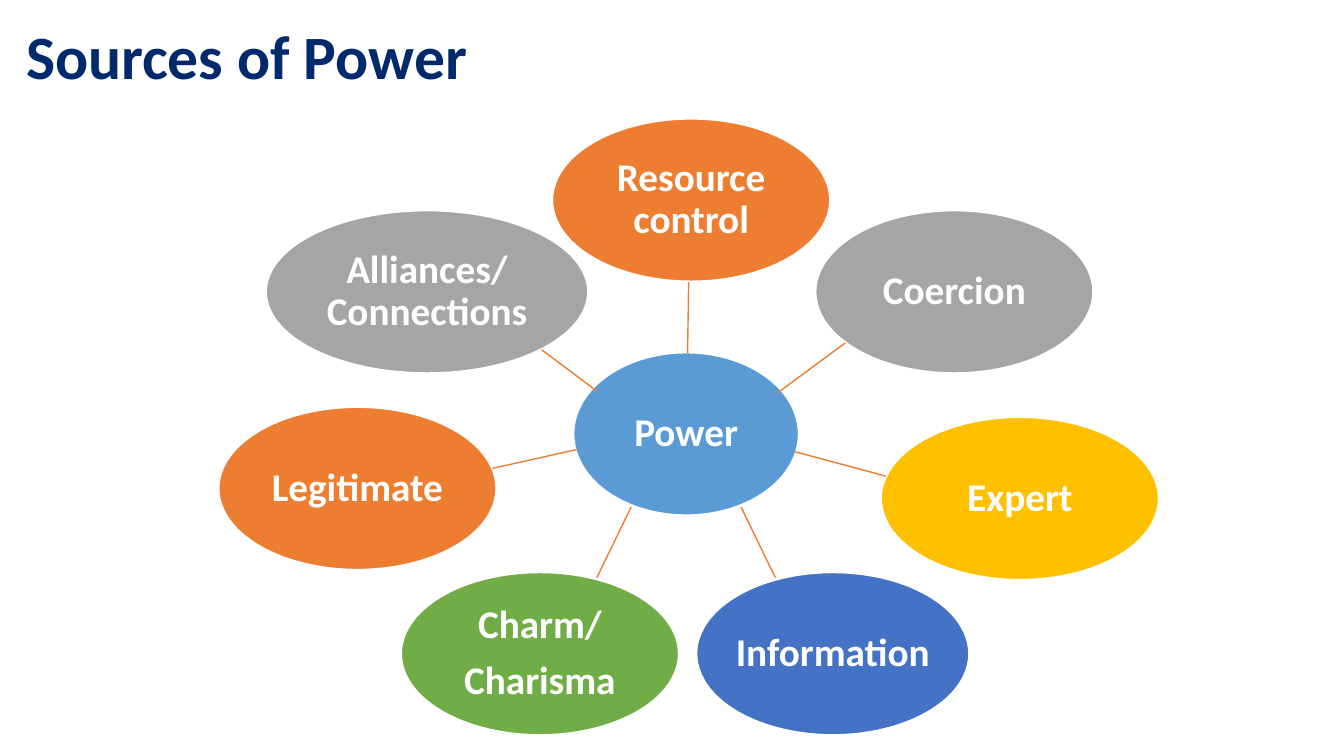
from lxml.etree import SubElement
from pptx import Presentation
from pptx.dml.color import RGBColor
from pptx.enum.shapes import MSO_CONNECTOR, MSO_SHAPE
from pptx.enum.text import MSO_ANCHOR, PP_ALIGN
from pptx.oxml.ns import qn
from pptx.util import Inches, Pt

NAVY = RGBColor(0x00, 0x2A, 0x6C)
WHITE = RGBColor(0xFF, 0xFF, 0xFF)
LIGHT_BLUE = RGBColor(0x5B, 0x9B, 0xD5)
ORANGE = RGBColor(0xED, 0x7D, 0x31)
GRAY = RGBColor(0xA5, 0xA5, 0xA5)
GOLD = RGBColor(0xFF, 0xC0, 0x00)
BLUE = RGBColor(0x44, 0x72, 0xC4)
GREEN = RGBColor(0x70, 0xAD, 0x47)

OVAL_HEIGHT = 1.61
SOURCE_WIDTH = 2.75

# paragraphs, left, top, width, fill, spoke from the hub to the oval
SOURCES = [
    (["Resource control"], 5.48, 1.18, SOURCE_WIDTH, ORANGE, (6.82, 3.5, 6.83, 2.79)),
    (["Coercion"], 8.09, 2.09, SOURCE_WIDTH, GRAY, (7.71, 3.9, 8.44, 3.36)),
    (["Expert"], 8.74, 4.14, SOURCE_WIDTH, GOLD, (7.88, 4.48, 8.81, 4.73)),
    (["Information"], 6.91, 5.68, 2.7, BLUE, (7.35, 5.03, 7.69, 5.73)),
    (["Charm/", "Charisma"], 3.98, 5.68, SOURCE_WIDTH, GREEN, (6.26, 5.03, 5.92, 5.73)),
    (["Legitimate"], 2.17, 4.04, SOURCE_WIDTH, ORANGE, (5.72, 4.46, 4.87, 4.65)),
    (["Alliances/\vConnections"], 2.64, 2.09, 3.19, GRAY, (5.92, 3.88, 5.32, 3.43)),
]


class PowerSlide:
    font_name = "Calibri"
    title_size = Pt(44)
    label_size = Pt(28)
    line_width = Pt(1)
    line_spacing = 0.9
    paragraph_gap = Pt(9.8)

    def __init__(self, presentation):
        self.slide = presentation.slides.add_slide(presentation.slide_layouts[6])

    def style(self, paragraph, size, color):
        paragraph.line_spacing = self.line_spacing
        font = paragraph.font
        font.name = self.font_name
        font.size = size
        font.bold = True
        font.color.rgb = color

    def title(self, text):
        box = self.slide.shapes.add_textbox(
            Inches(0.16), Inches(0), Inches(12.99), Inches(1.18))
        frame = box.text_frame
        frame.word_wrap = True
        frame.vertical_anchor = MSO_ANCHOR.MIDDLE
        frame.text = text
        self.style(frame.paragraphs[0], self.title_size, NAVY)

    def oval(self, lines, left, top, width, fill):
        oval = self.slide.shapes.add_shape(
            MSO_SHAPE.OVAL, Inches(left), Inches(top), Inches(width), Inches(OVAL_HEIGHT))
        oval.shadow.inherit = False
        oval.fill.solid()
        oval.fill.fore_color.rgb = fill
        oval.line.color.rgb = WHITE
        oval.line.width = self.line_width

        frame = oval.text_frame
        frame.margin_left = frame.margin_right = 0
        frame.margin_top = frame.margin_bottom = 0
        # Only labels of several words wrap; single words stay whole.
        frame.word_wrap = any(" " in line for line in lines)
        frame.vertical_anchor = MSO_ANCHOR.MIDDLE
        frame.text = "\n".join(lines)
        for index, paragraph in enumerate(frame.paragraphs):
            paragraph.alignment = PP_ALIGN.CENTER
            if index:
                paragraph.space_before = self.paragraph_gap
            self.style(paragraph, self.label_size, WHITE)

    def spoke(self, *ends):
        spoke = self.slide.shapes.add_connector(
            MSO_CONNECTOR.STRAIGHT, *(Inches(value) for value in ends))
        spoke.line.color.rgb = ORANGE
        spoke.line.width = self.line_width
        SubElement(spoke._element.spPr, qn("a:effectLst"))


def main():
    presentation = Presentation()
    presentation.slide_width = Inches(13.33)
    presentation.slide_height = Inches(7.5)

    slide = PowerSlide(presentation)
    slide.oval(["Power"], 5.69, 3.5, 2.23, LIGHT_BLUE)
    for lines, left, top, width, fill, ends in SOURCES:
        slide.spoke(*ends)
        slide.oval(lines, left, top, width, fill)
    slide.title("Sources of Power")

    presentation.save("out.pptx")


if __name__ == "__main__":
    main()
